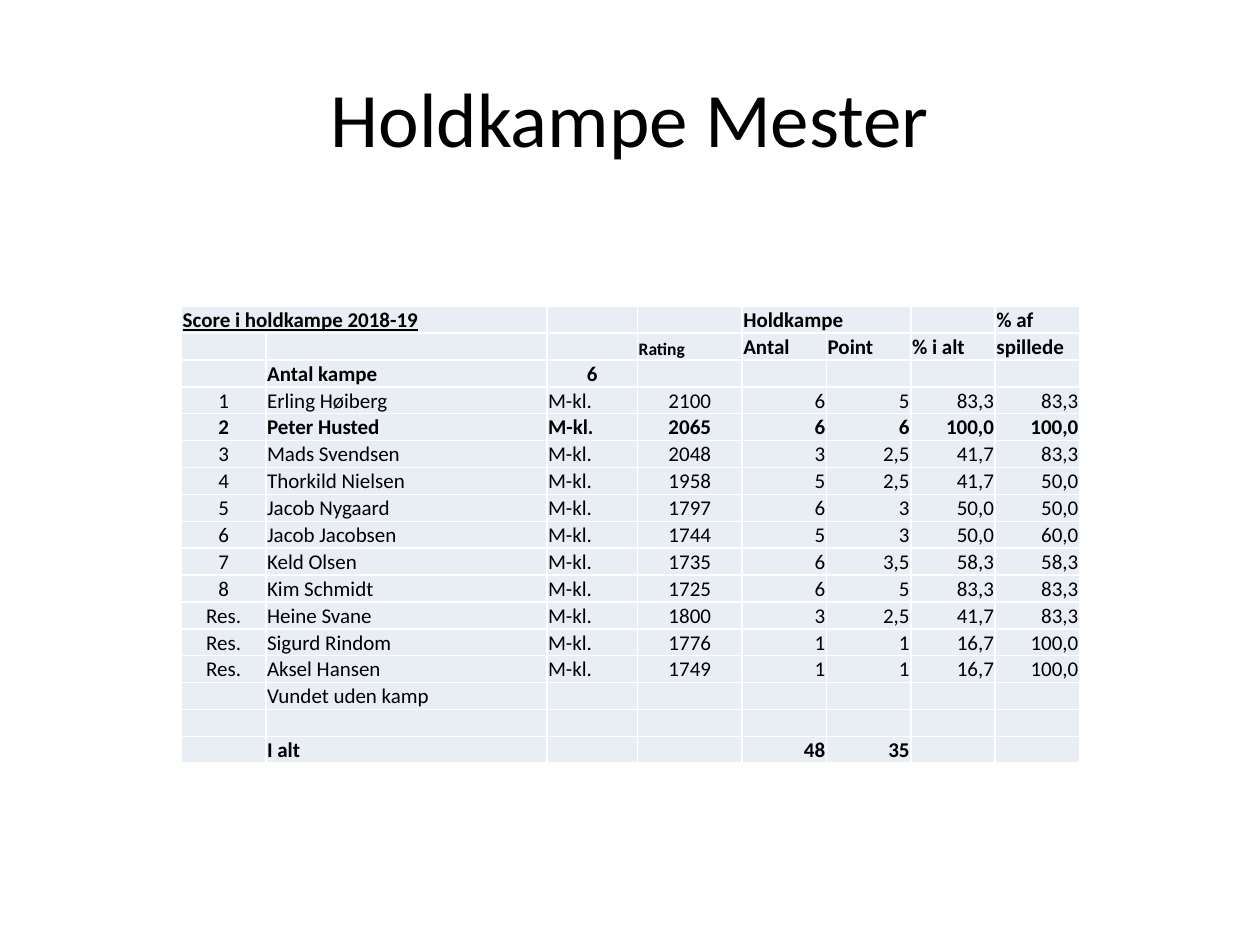
import pptx
import pptx.util
import pptx.dml.color
import pptx.enum.text
import pptx.oxml
import pptx.oxml.ns
from pptx.util import Inches

FONT = "Calibri"
BLACK = "000000"
WHITE = "FFFFFF"
CELL_FILL = "E9EDF4"
ALIGN = pptx.enum.text.PP_ALIGN
ANCHOR = pptx.enum.text.MSO_ANCHOR

COLUMN_WIDTHS = [0.67, 2.23, 0.72, 0.83, 0.67, 0.67, 0.67, 0.67]
COLUMN_ALIGNS = [ALIGN.CENTER, ALIGN.LEFT, ALIGN.LEFT, ALIGN.CENTER] + [ALIGN.RIGHT] * 4
ROW_HEIGHT = 0.21
HEADER_ROWS = 2
MATCH_COUNT_ROW = 2
BOLD_ROWS = {0, 1, MATCH_COUNT_ROW, 4, 16}

PLAYERS = [
    ("1", "Erling Høiberg", "2100", "6", "5", "83,3", "83,3"),
    ("2", "Peter Husted", "2065", "6", "6", "100,0", "100,0"),
    ("3", "Mads Svendsen", "2048", "3", "2,5", "41,7", "83,3"),
    ("4", "Thorkild Nielsen", "1958", "5", "2,5", "41,7", "50,0"),
    ("5", "Jacob Nygaard", "1797", "6", "3", "50,0", "50,0"),
    ("6", "Jacob Jacobsen", "1744", "5", "3", "50,0", "60,0"),
    ("7", "Keld Olsen", "1735", "6", "3,5", "58,3", "58,3"),
    ("8", "Kim Schmidt", "1725", "6", "5", "83,3", "83,3"),
    ("Res.", "Heine Svane", "1800", "3", "2,5", "41,7", "83,3"),
    ("Res.", "Sigurd Rindom", "1776", "1", "1", "16,7", "100,0"),
    ("Res.", "Aksel Hansen", "1749", "1", "1", "16,7", "100,0"),
]

SCORES = [
    ("Score i holdkampe 2018-19", "", "", "", "Holdkampe", "", "", "% af"),
    ("", "", "", "Rating", "Antal", "Point", "% i alt", "spillede"),
    ("", "Antal kampe", "6", "", "", "", "", ""),
    *[(place, name, "M-kl.", *results) for place, name, *results in PLAYERS],
    ("", "Vundet uden kamp", "", "", "", "", "", ""),
    ("",) * 8,
    ("", "I alt", "", "", "48", "35", "", ""),
]


def rgb(color):
    return pptx.dml.color.RGBColor.from_string(color)


def add_text(paragraph, text, size, bold=False, underline=False):
    run = paragraph.add_run()
    run.text = text
    run.font.name = FONT
    run.font.size = pptx.util.Pt(size)
    run.font.bold = bold
    run.font.underline = underline
    run.font.color.rgb = rgb(BLACK)


def add_title(slide, text):
    title = slide.shapes.title
    title.left, title.top = Inches(0.5), Inches(0.3)
    title.width, title.height = Inches(9), Inches(1.25)
    title.text_frame.vertical_anchor = ANCHOR.MIDDLE
    paragraph = title.text_frame.paragraphs[0]
    paragraph.alignment = ALIGN.CENTER
    add_text(paragraph, text, 44)


def set_borders(cell):
    properties = cell._tc.get_or_add_tcPr()
    for side in ("lnL", "lnR", "lnT", "lnB"):
        properties.append(pptx.oxml.parse_xml(
            f'<a:{side} {pptx.oxml.ns.nsdecls("a")} w="12700">'
            f'<a:solidFill><a:srgbClr val="{WHITE}"/></a:solidFill></a:{side}>'))


def format_cell(cell):
    set_borders(cell)
    cell.fill.solid()
    cell.fill.fore_color.rgb = rgb(CELL_FILL)
    cell.margin_left = cell.margin_right = cell.margin_top = Inches(0.01)
    cell.margin_bottom = 0
    cell.vertical_anchor = ANCHOR.BOTTOM


def set_empty_size(paragraph):
    paragraph._p.append(pptx.oxml.parse_xml(
        f'<a:endParaRPr {pptx.oxml.ns.nsdecls("a")} sz="1200"/>'))


def cell_alignment(row, column):
    if row < HEADER_ROWS:
        return ALIGN.LEFT
    if (row, column) == (MATCH_COUNT_ROW, 2):
        return ALIGN.CENTER
    return COLUMN_ALIGNS[column]


def add_score_table(slide):
    frame = slide.shapes.add_table(
        len(SCORES), len(COLUMN_WIDTHS), Inches(1.44), Inches(2.43),
        Inches(sum(COLUMN_WIDTHS)), Inches(ROW_HEIGHT * len(SCORES)))
    table = frame.table
    table.first_row = False
    table.horz_banding = False
    for column, width in zip(table.columns, COLUMN_WIDTHS):
        column.width = Inches(width)
    for row in table.rows:
        row.height = Inches(ROW_HEIGHT)
    for row, values in enumerate(SCORES):
        for column, value in enumerate(values):
            cell = table.cell(row, column)
            format_cell(cell)
            paragraph = cell.text_frame.paragraphs[0]
            if value:
                paragraph.alignment = cell_alignment(row, column)
                add_text(paragraph, value, 10 if value == "Rating" else 12,
                         bold=row in BOLD_ROWS, underline=(row, column) == (0, 0))
            else:
                set_empty_size(paragraph)
    for first in (0, 4):
        table.cell(0, first).merge(table.cell(0, first + 1))


def main():
    presentation = pptx.Presentation()
    presentation.slide_width = Inches(10)
    presentation.slide_height = Inches(7.5)
    slide = presentation.slides.add_slide(presentation.slide_layouts[5])
    slide.background.fill.solid()
    slide.background.fill.fore_color.rgb = rgb(WHITE)
    add_title(slide, "Holdkampe Mester")
    add_score_table(slide)
    presentation.save("out.pptx")


if __name__ == "__main__":
    main()
